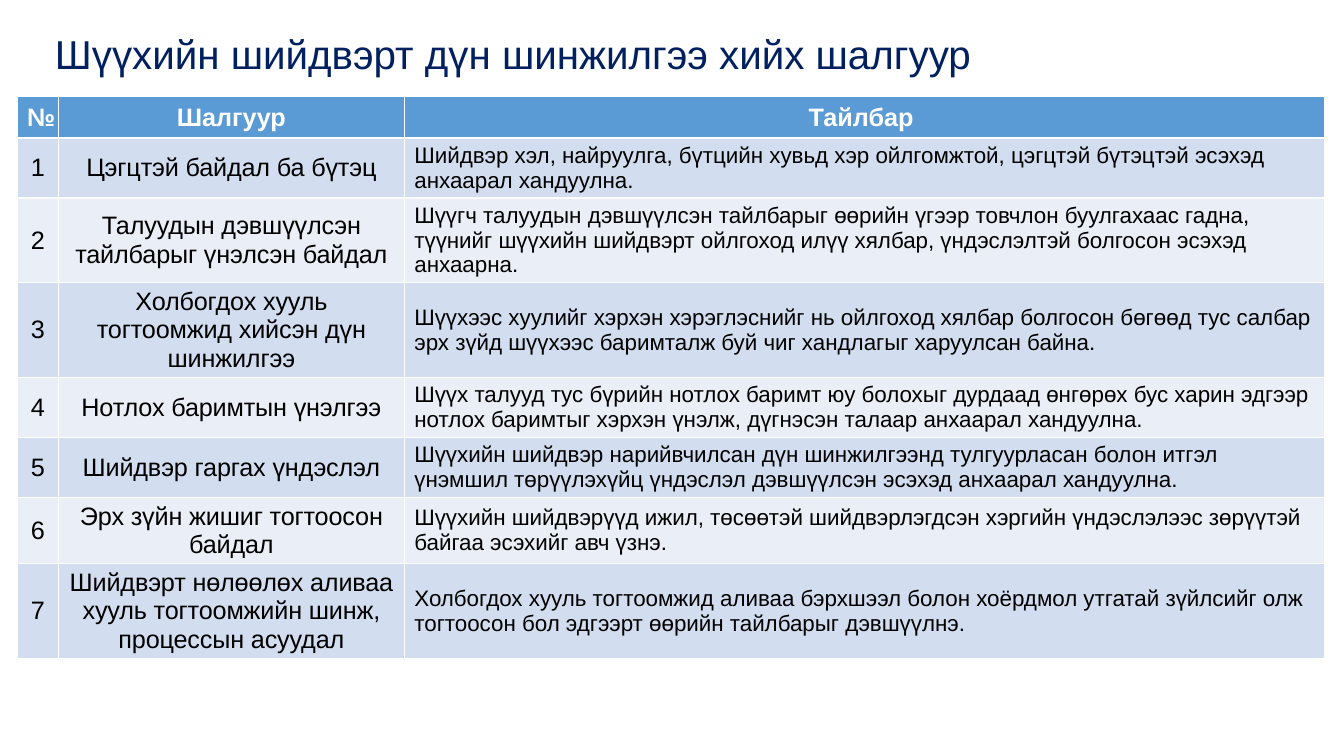
from dataclasses import dataclass

from pptx import Presentation
from pptx import util as u
from pptx.dml import color
from pptx.enum import text

FONT = "Arial"
NAVY, WHITE, BLACK = "002060", "FFFFFF", "000000"
HEADER_FILL = "5B9BD5"
BAND_FILLS = ("D2DEEF", "EAEFF7")
COLUMN_WIDTHS = (0.41, 3.43, 9.13)
ROW_HEIGHT = 0.41
HEADINGS = ("№", "Шалгуур", "Тайлбар ")


@dataclass
class Criterion:
    name: str
    explanation: str


CRITERIA = [
    Criterion("Цэгцтэй байдал ба бүтэц",
              "Шийдвэр хэл, найруулга, бүтцийн хувьд хэр ойлгомжтой, цэгцтэй "
              "бүтэцтэй эсэхэд анхаарал хандуулна."),
    Criterion("Талуудын дэвшүүлсэн тайлбарыг үнэлсэн байдал",
              "Шүүгч талуудын дэвшүүлсэн тайлбарыг өөрийн үгээр товчлон буулгахаас "
              "гадна, түүнийг шүүхийн шийдвэрт ойлгоход илүү хялбар, үндэслэлтэй "
              "болгосон эсэхэд анхаарна."),
    Criterion("Холбогдох хууль тогтоомжид хийсэн дүн шинжилгээ",
              "Шүүхээс хуулийг хэрхэн хэрэглэснийг нь ойлгоход хялбар болгосон бөгөөд "
              "тус салбар эрх зүйд шүүхээс баримталж буй чиг хандлагыг харуулсан байна."),
    Criterion("Нотлох баримтын үнэлгээ",
              "Шүүх талууд тус бүрийн нотлох баримт юу болохыг дурдаад өнгөрөх бус "
              "харин эдгээр нотлох баримтыг хэрхэн үнэлж, дүгнэсэн талаар анхаарал "
              "хандуулна."),
    Criterion("Шийдвэр гаргах үндэслэл",
              "Шүүхийн шийдвэр нарийвчилсан дүн шинжилгээнд тулгуурласан болон итгэл "
              "үнэмшил төрүүлэхүйц үндэслэл дэвшүүлсэн эсэхэд анхаарал хандуулна."),
    Criterion("Эрх зүйн жишиг тогтоосон байдал",
              "Шүүхийн шийдвэрүүд ижил, төсөөтэй шийдвэрлэгдсэн хэргийн үндэслэлээс "
              "зөрүүтэй байгаа эсэхийг авч үзнэ."),
    Criterion("Шийдвэрт нөлөөлөх аливаа хууль тогтоомжийн шинж, процессын асуудал",
              "Холбогдох хууль тогтоомжид аливаа бэрхшээл болон хоёрдмол утгатай "
              "зүйлсийг олж тогтоосон бол эдгээрт өөрийн тайлбарыг дэвшүүлнэ."),
]


def rgb(value: str) -> color.RGBColor:
    return color.RGBColor.from_string(value)


def write(frame, words: str, *, size: float = 18, ink: str = BLACK, bold: bool = False,
          align=text.PP_ALIGN.CENTER, line_spacing: float = 1.0, tracking: float = 0) -> None:
    para = frame.paragraphs[0]
    para.alignment = align
    para.line_spacing = line_spacing
    span = para.add_run()
    span.text = words
    span.font.name = FONT
    span.font.size = u.Pt(size)
    span.font.bold = bold
    span.font.color.rgb = rgb(ink)
    if tracking:
        span.font._element.set("spc", str(round(tracking * 100)))


def fill_cell(cell, words: str, background: str, **style) -> None:
    cell.fill.solid()
    cell.fill.fore_color.rgb = rgb(background)
    cell.vertical_anchor = text.MSO_ANCHOR.MIDDLE
    write(cell.text_frame, words, **style)


def add_title(page) -> None:
    title = page.shapes.title
    title.left, title.top = u.Inches(0.28), u.Inches(0.23)
    title.width, title.height = u.Inches(9.62), u.Inches(0.65)
    frame = title.text_frame
    frame.auto_size = text.MSO_AUTO_SIZE.NONE
    frame.vertical_anchor = text.MSO_ANCHOR.MIDDLE
    write(frame, "Шүүхийн шийдвэрт дүн шинжилгээ хийх шалгуур",
          size=28.8, ink=NAVY, line_spacing=0.9)


def add_criteria_table(page) -> None:
    row_count = len(CRITERIA) + 1
    table = page.shapes.add_table(
        row_count, len(COLUMN_WIDTHS), u.Inches(0.17), u.Inches(0.96),
        u.Inches(sum(COLUMN_WIDTHS)), u.Inches(ROW_HEIGHT * row_count)).table
    for column, width in zip(table.columns, COLUMN_WIDTHS):
        column.width = u.Inches(width)
    for index, heading in enumerate(HEADINGS):
        fill_cell(table.cell(0, index), heading, HEADER_FILL, ink=WHITE, bold=True)
    for number, criterion in enumerate(CRITERIA, start=1):
        band = BAND_FILLS[(number - 1) % 2]
        fill_cell(table.cell(number, 0), str(number), band)
        fill_cell(table.cell(number, 1), criterion.name, band, tracking=-0.1)
        fill_cell(table.cell(number, 2), criterion.explanation, band,
                  size=16, align=text.PP_ALIGN.LEFT)


def main() -> None:
    deck = Presentation()
    deck.slide_width, deck.slide_height = u.Inches(13.33), u.Inches(7.5)
    page = deck.slides.add_slide(deck.slide_layouts.get_by_name("Title Only"))
    add_title(page)
    add_criteria_table(page)
    deck.save("out.pptx")


if __name__ == "__main__":
    main()
